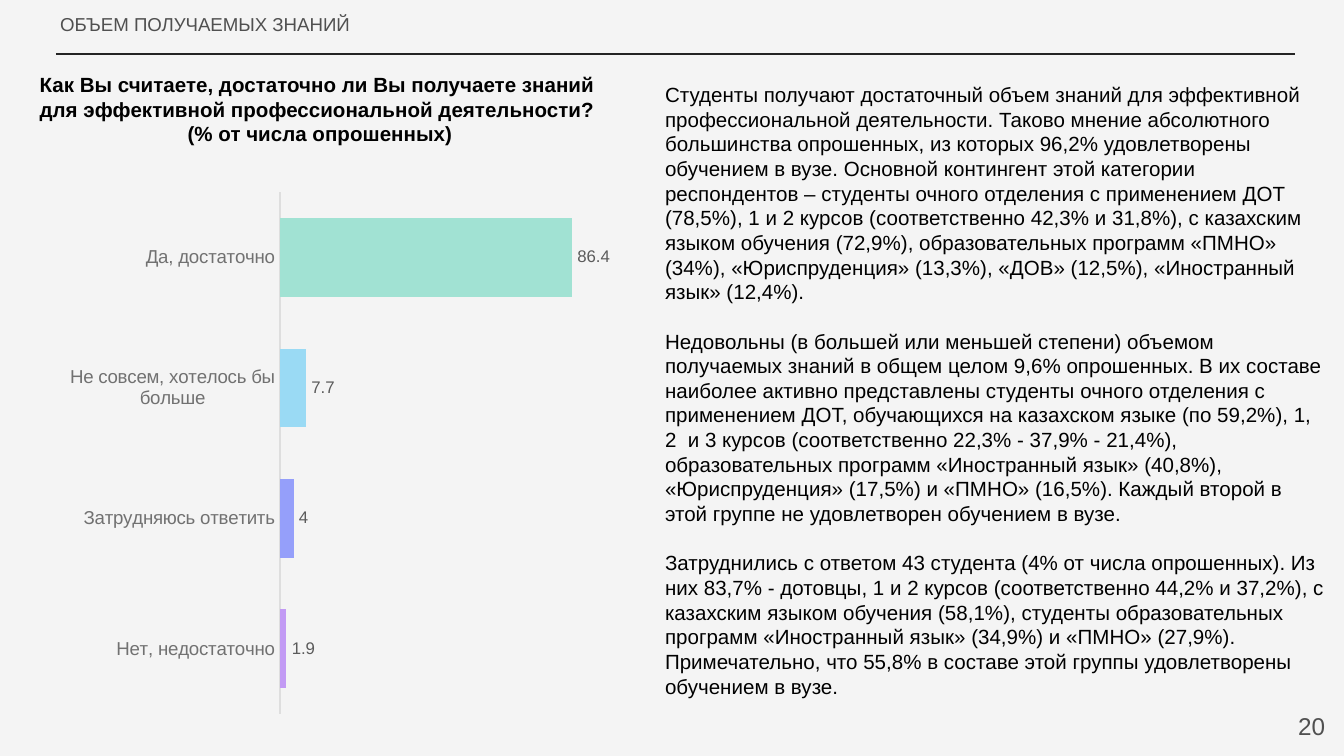
"""Build a survey slide with a bar chart and its commentary."""
from lxml import etree
from pptx import Presentation
from pptx.chart.data import CategoryChartData
from pptx.dml.color import RGBColor
from pptx.enum.chart import XL_CHART_TYPE as ChartType
from pptx.enum.chart import XL_LABEL_POSITION as LabelPos
from pptx.enum.chart import XL_TICK_MARK as TickMark
from pptx.enum.shapes import MSO_CONNECTOR as Connector
from pptx.enum.text import MSO_ANCHOR as Anchor
from pptx.enum.text import PP_ALIGN as Align
from pptx.oxml import parse_xml
from pptx.oxml.ns import nsdecls, qn
from pptx.util import Emu, Pt

FONT = "Arial"
BACKGROUND = RGBColor(0xF4, 0xF4, 0xF4)
BLACK = RGBColor(0x00, 0x00, 0x00)
RULE = RGBColor(0x24, 0x24, 0x24)
GREY = RGBColor(0x50, 0x50, 0x50)
LABEL = RGBColor(0x5B, 0x5B, 0x5B)
CATEGORY = RGBColor(0x71, 0x71, 0x71)
AXIS = RGBColor(0xDE, 0xDE, 0xDE)

ANSWERS = [
    ("Нет, недостаточно", 1.9, RGBColor(0xC2, 0x9A, 0xF4)),
    ("Затрудняюсь ответить", 4, RGBColor(0x95, 0x9F, 0xFA)),
    ("Не совсем, хотелось бы больше", 7.7, RGBColor(0x9A, 0xDA, 0xF4)),
    ("Да, достаточно", 86.4, RGBColor(0xA1, 0xE2, 0xD3)),
]
QUESTION = [
    "Как Вы считаете, достаточно ли Вы получаете знаний ",
    "для эффективной профессиональной деятельности? ",
    "(% от числа опрошенных)",
]
COMMENTS = [
    "Студенты получают достаточный объем знаний для эффективной "
    "профессиональной деятельности. Таково мнение абсолютного большинства "
    "опрошенных, из которых 96,2% удовлетворены обучением в вузе. Основной "
    "контингент этой категории респондентов – студенты очного отделения с "
    "применением ДОТ (78,5%), 1 и 2 курсов (соответственно 42,3% и 31,8%), с "
    "казахским языком обучения (72,9%), образовательных программ «ПМНО» (34%), "
    "«Юриспруденция» (13,3%), «ДОВ» (12,5%), «Иностранный язык» (12,4%).",
    "Недовольны (в большей или меньшей степени) объемом получаемых знаний в "
    "общем целом 9,6% опрошенных. В их составе наиболее активно представлены "
    "студенты очного отделения с применением ДОТ, обучающихся на казахском "
    "языке (по 59,2%), 1, 2  и 3 курсов (соответственно 22,3% - 37,9% - 21,4%), "
    "образовательных программ «Иностранный язык» (40,8%), «Юриспруденция» "
    "(17,5%) и «ПМНО» (16,5%). Каждый второй в этой группе не удовлетворен "
    "обучением в вузе.",
    "Затруднились с ответом 43 студента (4% от числа опрошенных). Из них 83,7% - "
    "дотовцы, 1 и 2 курсов (соответственно 44,2% и 37,2%), с казахским языком "
    "обучения (58,1%), студенты образовательных программ «Иностранный язык» "
    "(34,9%) и «ПМНО» (27,9%). Примечательно, что 55,8% в составе этой группы "
    "удовлетворены обучением в вузе.",
]


def px(n):
    return Emu(round(n * 914400 / 134.4))


def style_font(font, size, color, bold=False):
    font.name = FONT
    font.size = Pt(size)
    font.bold = bold
    font.color.rgb = color


def add_text(s, box, paragraphs, size, color, bold=False, align=Align.LEFT,
             anchor=Anchor.TOP, inset=(13, 7), gap=0):
    tf = s.shapes.add_textbox(*map(px, box)).text_frame
    tf.word_wrap = True
    tf.vertical_anchor = anchor
    tf.margin_left = tf.margin_right = px(inset[0])
    tf.margin_top = tf.margin_bottom = px(inset[1])
    tf.text = "\n".join(paragraphs)
    for i, p in enumerate(tf.paragraphs):
        p.alignment = align
        p.space_before = Pt(gap if i else 0)
        for r in p.runs:
            style_font(r.font, size, color, bold)


def add_rule(s, x1, x2, y):
    line = s.shapes.add_connector(Connector.STRAIGHT, px(x1), px(y), px(x2), px(y))
    line.line.color.rgb = RULE
    line.line.width = Pt(0.75)
    etree.SubElement(line._element.spPr, qn("a:effectLst"))


def set_plot_layout(chart, x, y, w, h):
    area = chart._chartSpace.chart.plotArea
    for old in area.findall(qn("c:layout")):
        area.remove(old)
    area.insert(0, parse_xml(
        f'<c:layout {nsdecls("c")}><c:manualLayout><c:layoutTarget val="inner"/>'
        '<c:xMode val="edge"/><c:yMode val="edge"/>'
        f'<c:x val="{x}"/><c:y val="{y}"/><c:w val="{w}"/><c:h val="{h}"/>'
        '</c:manualLayout></c:layout>'))


def add_answer_chart(s, box):
    names, values, colors = zip(*ANSWERS)
    data = CategoryChartData()
    data.categories = names
    data.add_series("Series 1", values)
    chart = s.shapes.add_chart(ChartType.BAR_CLUSTERED, *map(px, box), data).chart
    chart.has_legend = chart.has_title = False
    style_font(chart.font, 10, RULE)

    axis = chart.category_axis
    axis.major_tick_mark = axis.minor_tick_mark = TickMark.NONE
    axis.format.line.color.rgb = AXIS
    axis.format.line.width = Pt(0.75)
    style_font(axis.tick_labels.font, 10, CATEGORY)
    scale = chart.value_axis
    scale.minimum_scale, scale.maximum_scale = 0, 100
    scale.has_major_gridlines = scale.visible = False

    plot = chart.plots[0]
    plot.gap_width = 66
    plot.vary_by_categories = False
    plot.has_data_labels = True
    labels = plot.data_labels
    labels.show_value = True
    labels.position = LabelPos.OUTSIDE_END
    style_font(labels.font, 9, LABEL)
    for i, color in enumerate(colors):
        fill = plot.series[0].points[i].format.fill
        fill.solid()
        fill.fore_color.rgb = color
    set_plot_layout(chart, 0.42, 0.09, 0.57, 0.9)


def main():
    prs = Presentation()
    prs.slide_width, prs.slide_height = px(1344), px(756)
    s = prs.slides.add_slide(prs.slide_layouts[6])
    s.background.fill.solid()
    s.background.fill.fore_color.rgb = BACKGROUND
    add_rule(s, 56, 1295, 54)
    add_text(s, (1258, 697, 80, 57), ["20"], 13, GREY, align=Align.RIGHT,
             anchor=Anchor.MIDDLE, inset=(13, 13))
    add_text(s, (42, 2, 368, 50), [" ОБЪЕМ ПОЛУЧАЕМЫХ ЗНАНИЙ"], 10, GREY,
             inset=(13, 13))
    add_text(s, (3, 65, 634, 89), QUESTION, 11, BLACK, bold=True,
             align=Align.CENTER)
    add_text(s, (652, 75, 687, 636), COMMENTS, 11, BLACK, gap=13.2)
    add_answer_chart(s, (31, 140, 593, 580))
    prs.save("out.pptx")


if __name__ == "__main__":
    main()
